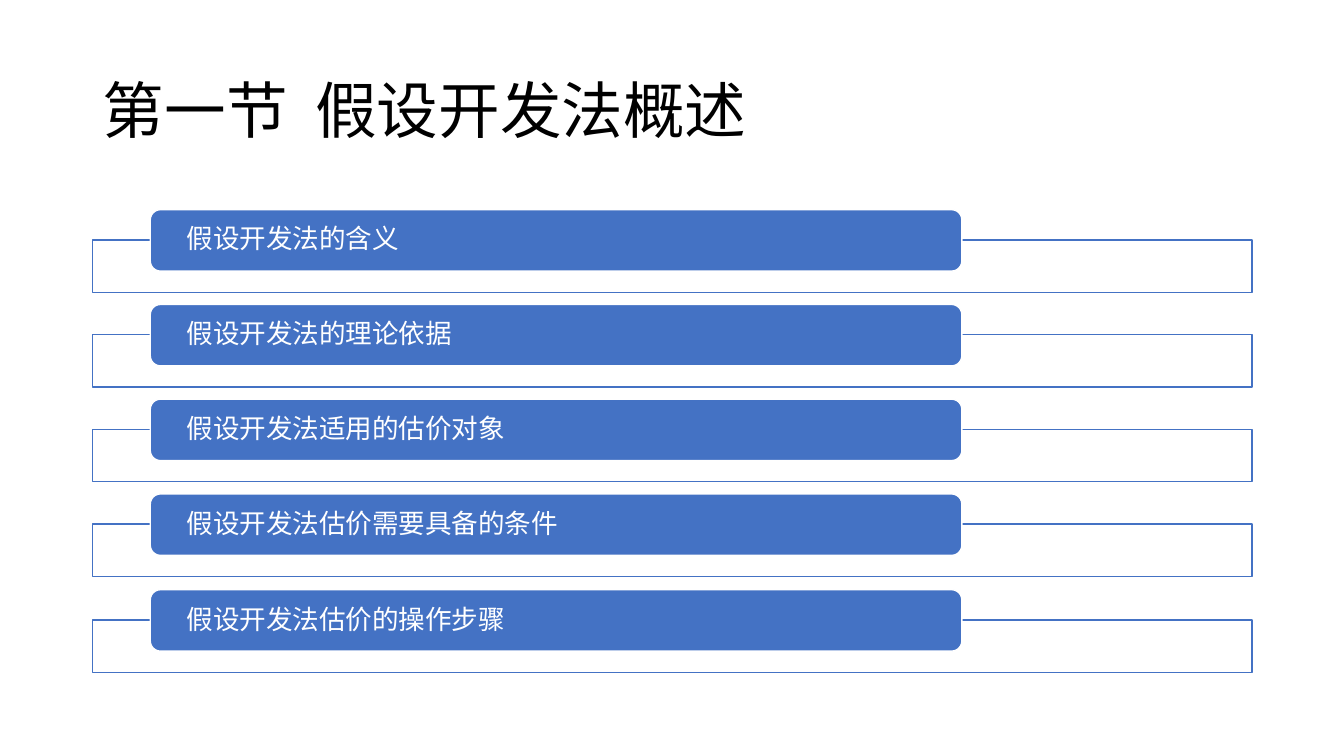
from lxml.etree import SubElement
from pptx import Presentation
from pptx.dml.color import RGBColor
from pptx.enum.shapes import MSO_SHAPE as Shape
from pptx.enum.text import MSO_ANCHOR as Anchor, MSO_AUTO_SIZE as Fit, PP_ALIGN as Align
from pptx.oxml.ns import qn
from pptx.util import Pt

PX = 9144  # EMU per px, 100 px to the inch
FONT = "Noto Sans CJK SC"
COLORS = {"blue": "4472C4", "white": "FFFFFF", "black": "000000"}
TOPICS = [
    "假设开发法的含义",
    "假设开发法的理论依据",
    "假设开发法适用的估价对象",
    "假设开发法估价需要具备的条件",
    "假设开发法估价的操作步骤",
]
LEFT, WIDTH = 92, 1150
TOP, SPAN = 208, 377  # first bar, and distance from it to the last


def color(name):
    return RGBColor.from_string(COLORS[name])


def write(shape, text, size, ink, inset):
    frame = shape.text_frame
    frame.text = text
    frame.word_wrap = True
    frame.auto_size = Fit.NONE
    frame.vertical_anchor = Anchor.MIDDLE
    frame.margin_left = frame.margin_right = inset * PX
    frame.margin_top = frame.margin_bottom = 0
    para = frame.paragraphs[0]
    para.alignment = Align.LEFT
    para.line_spacing = 0.9
    font = para.font
    font.size = Pt(size)
    font.color.rgb = color(ink)
    font.name = FONT
    props = para._p.pPr.find(qn("a:defRPr"))
    SubElement(props, qn("a:ea"), typeface=FONT)


def add_title(slide, text):
    title = slide.shapes.title
    title.left, title.top = LEFT * PX, 40 * PX
    title.width, title.height = WIDTH * PX, 145 * PX
    write(title, text, 44, "black", 10)


def add_box(slide, kind, left, top, width, height, fill, line):
    box = slide.shapes.add_shape(kind, left * PX, top * PX, width * PX, height * PX)
    box.shadow.inherit = False
    box.fill.solid()
    box.fill.fore_color.rgb = color(fill)
    box.line.color.rgb = color(line)
    box.line.width = Pt(1)
    return box


def add_topic(slide, text, top):
    """Add a frame with a labelled bar over its upper edge."""
    add_box(slide, Shape.RECTANGLE, LEFT, top + 30, WIDTH, 52, "white", "blue")
    bar = add_box(slide, Shape.ROUNDED_RECTANGLE, 149, top, 805, 61, "blue", "white")
    write(bar, text, 19, "white", 33)


def main():
    deck = Presentation()
    deck.slide_width, deck.slide_height = 1333 * PX, 750 * PX
    slide = deck.slides.add_slide(deck.slide_layouts[5])
    add_title(slide, "第一节  假设开发法概述")
    for i, topic in enumerate(TOPICS):
        add_topic(slide, topic, TOP + SPAN * i // (len(TOPICS) - 1))
    deck.save("out.pptx")


if __name__ == "__main__":
    main()
